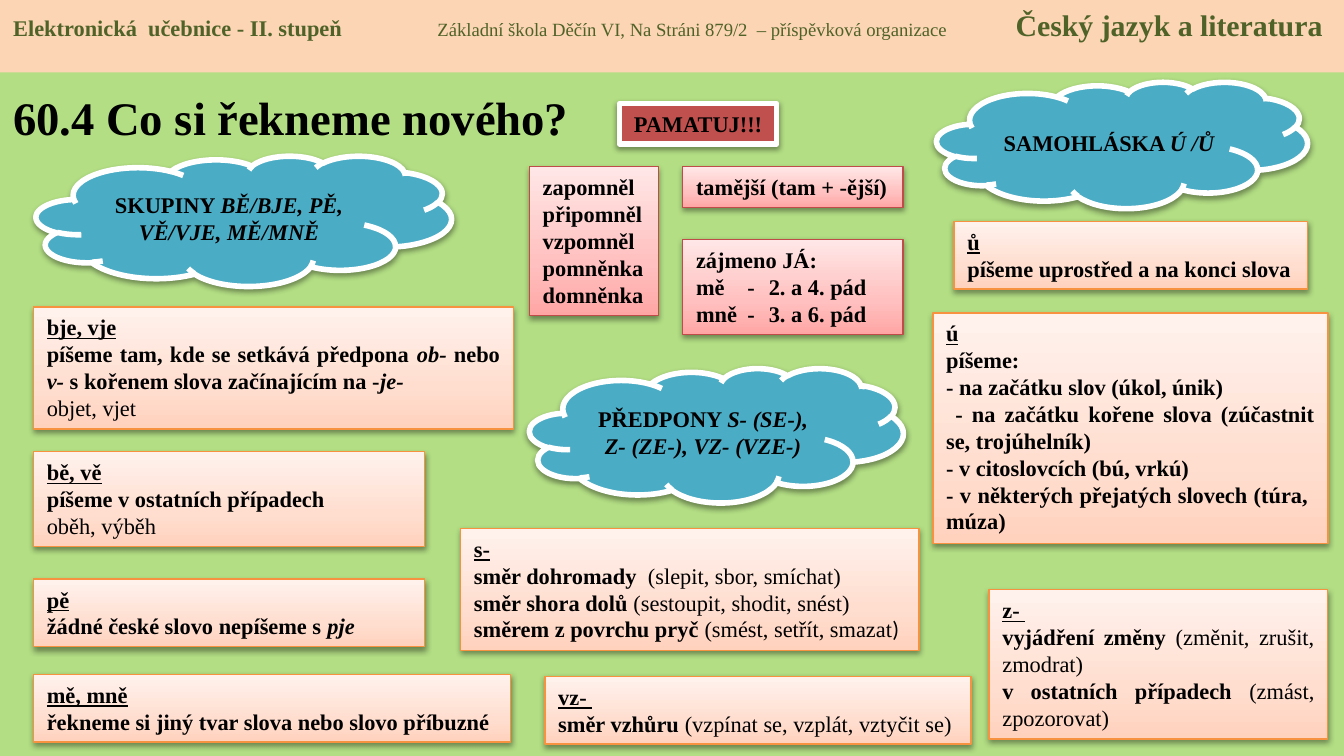
from copy import deepcopy
from dataclasses import dataclass
from typing import NamedTuple

from lxml import etree
from pptx import Presentation
from pptx.dml.color import RGBColor
from pptx.enum.shapes import MSO_SHAPE
from pptx.enum.text import MSO_ANCHOR, PP_ALIGN
from pptx.oxml.ns import qn
from pptx.util import Pt

RECTANGLE, CLOUD = MSO_SHAPE.RECTANGLE, MSO_SHAPE.CLOUD
TOP, MIDDLE = MSO_ANCHOR.TOP, MSO_ANCHOR.MIDDLE
LEFT, CENTER, JUSTIFY = PP_ALIGN.LEFT, PP_ALIGN.CENTER, PP_ALIGN.JUSTIFY

COLORS = {
    "background": "B3DE84", "header": "FCD5B5", "header_text": "4F6228",
    "text": "000000", "white": "FFFFFF", "cloud": "4BACC6", "badge": "C0504D",
    "orange_line": "F69240", "red_line": "BF4C48",
}
GRADIENTS = {
    "orange": ((0, "FFD2BD"), (0.35, "FFDED0"), (1, "FFF2ED")),
    "red": ((0, "FFA6A5"), (0.35, "FFC0BF"), (1, "FFE7E7")),
}
SERIF = "Times New Roman"
LINE_HEIGHT = 14.55
VERTICAL_INSETS = 7.2


class Run(NamedTuple):
    text: str
    bold: bool = True
    italic: bool = False
    underline: bool = False
    size: float = 12
    font: str = SERIF
    color: str = "text"


@dataclass
class Cloud:
    left: float
    top: float
    width: float
    height: float
    runs: list[Run]


@dataclass
class Card:
    left: float
    top: float
    width: float
    lines: int
    paragraphs: list[list[Run]]
    theme: str = "orange"
    align: PP_ALIGN = LEFT
    wrap: bool = True
    tabs: tuple = ()


def plain(text: str) -> Run:
    return Run(text, bold=False)


def italic(text: str) -> Run:
    return Run(text, italic=True)


def heading(text: str) -> list[Run]:
    return [Run(text, underline=True)]


def rgb(name: str) -> RGBColor:
    return RGBColor.from_string(COLORS[name])


def add_tabs(paragraph, tabs) -> None:
    properties = paragraph._p.get_or_add_pPr()
    tab_list = etree.SubElement(properties, qn("a:tabLst"))
    for position, alignment in tabs:
        etree.SubElement(tab_list, qn("a:tab"), pos=str(Pt(position)), algn=alignment)


def write_text(shape, paragraphs, align=LEFT, anchor=TOP, wrap=True, tabs=()) -> None:
    frame = shape.text_frame
    frame.word_wrap = wrap
    frame.vertical_anchor = anchor
    for index, runs in enumerate(paragraphs):
        paragraph = frame.add_paragraph() if index else frame.paragraphs[0]
        paragraph.alignment = align
        if tabs:
            add_tabs(paragraph, tabs)
        for item in runs:
            run = paragraph.add_run()
            run.text = item.text
            run.font.name = item.font
            run.font.size = Pt(item.size)
            run.font.bold = item.bold
            run.font.italic = item.italic
            run.font.underline = item.underline
            run.font.color.rgb = rgb(item.color)


def add_shadow(shape) -> None:
    effects = shape._element.spPr.find(qn("a:effectLst"))
    shadow = etree.SubElement(effects, qn("a:outerShdw"), blurRad=str(Pt(3.1)),
                              dist=str(Pt(1.6)), dir="5400000", rotWithShape="0")
    color = etree.SubElement(shadow, qn("a:srgbClr"), val="000000")
    etree.SubElement(color, qn("a:alpha"), val="38000")


def add_box(slide, kind, left, top, width, height, fill=None, line=None, line_width=3):
    shape = slide.shapes.add_shape(kind, Pt(left), Pt(top), Pt(width), Pt(height))
    shape.shadow.inherit = False
    if fill:
        shape.fill.solid()
        shape.fill.fore_color.rgb = rgb(fill)
    if line:
        shape.line.color.rgb = rgb(line)
        shape.line.width = Pt(line_width)
        add_shadow(shape)
    else:
        shape.line.fill.background()
    return shape


def fill_gradient(shape, theme: str) -> None:
    shape.fill.gradient()
    shape.fill.gradient_angle = 90
    stop_list = shape._element.spPr.find(qn("a:gradFill")).find(qn("a:gsLst"))
    stop_list.append(deepcopy(stop_list[0]))
    for stop, (position, color) in zip(shape.fill.gradient_stops, GRADIENTS[theme]):
        stop.position = position
        stop.color.rgb = RGBColor.from_string(color)


def draw_cloud(slide, cloud: Cloud) -> None:
    shape = add_box(slide, CLOUD, cloud.left, cloud.top, cloud.width, cloud.height,
                    "cloud", "white")
    write_text(shape, [cloud.runs], CENTER, MIDDLE)


def draw_card(slide, card: Card) -> None:
    height = VERTICAL_INSETS + card.lines * LINE_HEIGHT
    shape = add_box(slide, RECTANGLE, card.left, card.top, card.width, height,
                    line=f"{card.theme}_line", line_width=0.75)
    fill_gradient(shape, card.theme)
    write_text(shape, card.paragraphs, card.align, wrap=card.wrap, tabs=card.tabs)


CLOUDS = [
    Cloud(19.4, 83.5, 222.5, 69.8, [Run("SKUPINY "), italic("BĚ/BJE, PĚ, VĚ/VJE, MĚ/MNĚ")]),
    Cloud(501.8, 43.9, 198.7, 67.7, [Run("SAMOHLÁSKA "), italic("Ú /Ů")]),
    Cloud(283.7, 197.3, 200.2, 72, [Run("PŘEDPONY "), italic("S- (SE-), Z- (ZE-), VZ- (VZE-)")]),
]
CARDS = [
    Card(18, 164.4, 257, 4, [
        heading("bje, vje"),
        [Run("píšeme tam, kde se setkává předpona "), italic("ob-"), Run(" nebo "),
         italic("v-"), Run(" s kořenem slova začínajícím na -"), italic("je-")],
        [plain("objet, vjet")]], align=JUSTIFY),
    Card(18, 242, 209.5, 3, [
        heading("bě, vě"), [Run("píšeme v ostatních případech")], [plain("oběh, výběh")]]),
    Card(18, 310.2, 209.5, 2, [
        heading("pě"), [Run("žádné české slovo nepíšeme s "), italic("pje")]]),
    Card(18, 361.3, 255.6, 2, [
        heading("mě, mně"), [Run("řekneme si jiný tvar slova nebo slovo příbuzné")]]),
    Card(283.7, 89.3, 69.1, 5, [
        [Run(word)] for word in ("zapomněl", "připomněl", "vzpomněl", "pomněnka", "domněnka")],
        "red", wrap=False),
    Card(365.8, 89.3, 118.1, 1, [[Run("tamější (tam + -ější)")]], "red", wrap=False),
    Card(365.8, 128.3, 118.1, 3, [
        [Run("zájmeno JÁ:")], [Run("mě\t-\t2. a 4. pád")], [Run("mně\t-\t3. a 6. pád")]],
        "red", tabs=((27.5, "l"), (39, "l"))),
    Card(511.2, 118.6, 189.4, 2, [
        heading("ů"), [Run("píšeme uprostřed a na konci slova")]], wrap=False),
    Card(499.8, 167.6, 211.7, 8, [
        heading("ú"), [Run("píšeme:")], [Run("- na začátku slov (úkol, únik)")],
        [Run(" - na začátku kořene slova (zúčastnit se, trojúhelník)")],
        [Run("- v citoslovcích (bú, vrkú)")],
        [Run("- v některých přejatých slovech (túra,  múza)")]], align=JUSTIFY),
    Card(246.8, 283, 245.5, 4, [
        heading("s-"),
        [Run("směr dohromady  "), plain("(slepit, sbor, smíchat)")],
        [Run("směr shora dolů "), plain("(sestoupit, shodit, snést)")],
        [Run("směrem z povrchu pryč "), plain("(smést, setřít, smazat"),
         Run(")", bold=False, font="Calibri")]]),
    Card(292, 362.3, 228.2, 2, [
        heading("vz- "),
        [Run("směr vzhůru "), plain("(vzpínat se, vzplát, vztyčit se)")]], wrap=False),
    Card(529.9, 316, 181.4, 5, [
        heading("z- "),
        [Run("vyjádření změny "), plain("(změnit, zrušit, zmodrat)")],
        [Run("v ostatních případech "), plain("(zmást, zpozorovat)")]], align=JUSTIFY),
]
HEADER = [
    Run("Elektronická  učebnice - II. stupeň\t", color="header_text"),
    Run("Základní škola Děčín VI, Na Stráni 879/2  – příspěvková organizace\t",
        bold=False, size=10, color="header_text"),
    Run("Český jazyk a literatura", size=16, color="header_text"),
]


def main() -> None:
    presentation = Presentation()
    presentation.slide_width, presentation.slide_height = Pt(720), Pt(405)
    slide = presentation.slides.add_slide(presentation.slide_layouts[6])
    slide.background.fill.solid()
    slide.background.fill.fore_color.rgb = rgb("background")

    title = slide.shapes.add_textbox(Pt(0), Pt(39), Pt(337.7), Pt(46.8))
    write_text(title, [[Run("60.4 Co si řekneme nového?", size=25)]], anchor=MIDDLE)
    header = add_box(slide, RECTANGLE, 0, 0, 720, 38.8, "header")
    write_text(header, [HEADER], tabs=((227.3, "l"), (701.5, "r")))
    badge = add_box(slide, RECTANGLE, 331.9, 55.4, 84.2, 21.8, "badge", "white")
    write_text(badge, [[Run("PAMATUJ!!!")]], CENTER, wrap=False)

    for cloud in CLOUDS:
        draw_cloud(slide, cloud)
    for card in CARDS:
        draw_card(slide, card)
    presentation.save("out.pptx")


if __name__ == "__main__":
    main()
